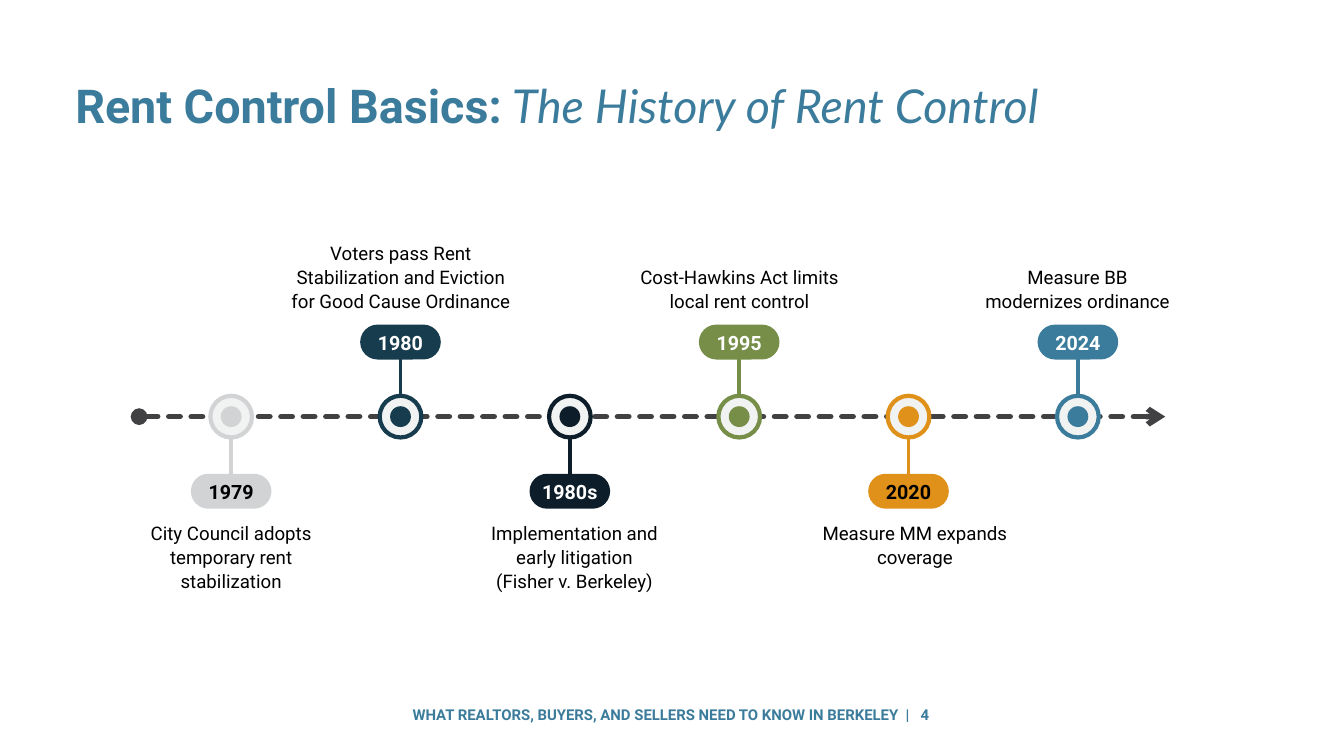
from pptx import Presentation
from pptx.dml.color import RGBColor
from pptx.enum.dml import MSO_LINE
from pptx.enum.shapes import MSO_CONNECTOR, MSO_SHAPE
from pptx.enum.text import MSO_ANCHOR, PP_ALIGN
from pptx.oxml.ns import qn
from pptx.util import Inches, Pt
from lxml import etree

STRAIGHT = MSO_CONNECTOR.STRAIGHT
OVAL, PILL = MSO_SHAPE.OVAL, MSO_SHAPE.ROUNDED_RECTANGLE
LEFT, CENTER = PP_ALIGN.LEFT, PP_ALIGN.CENTER
TOP, MIDDLE = MSO_ANCHOR.TOP, MSO_ANCHOR.MIDDLE
SHORT_DASH = MSO_LINE.SQUARE_DOT

BLACK = RGBColor(0x00, 0x00, 0x00)
WHITE = RGBColor(0xFF, 0xFF, 0xFF)
CHARCOAL = RGBColor(0x41, 0x40, 0x42)
PALE = RGBColor(0xF1, 0xF2, 0xF2)
SILVER = RGBColor(0xD1, 0xD3, 0xD4)
TEAL = RGBColor(0x17, 0x3C, 0x4E)
NAVY = RGBColor(0x0D, 0x1D, 0x29)
GREEN = RGBColor(0x76, 0x8E, 0x47)
AMBER = RGBColor(0xE0, 0x91, 0x1A)
BLUE = RGBColor(0x3B, 0x7B, 0x9B)

MILESTONES = [
    ("1979", "City Council adopts temporary rent stabilization",
     SILVER, BLACK, (2.19, 2.5, 1.07)),
    ("1980", "Voters pass Rent Stabilization and Eviction for Good Cause Ordinance",
     TEAL, WHITE, (4.27, 3.39, 1.07)),
    ("1980s", "Implementation and early litigation (Fisher v. Berkeley)",
     NAVY, WHITE, (7.23, 2.64, 1.07)),
    ("1995", "Cost-Hawkins Act limits local rent control",
     GREEN, WHITE, (9.51, 2.99, 0.72)),
    ("2020", "Measure MM expands coverage",
     AMBER, BLACK, (12.12, 2.99, 0.72)),
    ("2024", "Measure BB modernizes ordinance",
     BLUE, WHITE, (14.54, 2.99, 0.72)),
]


def write_text(shape, spans, size, color, spacing, align=CENTER, anchor=TOP, wrap=True):
    """Fill a shape with one paragraph of (text, font, bold, italic) spans."""
    frame = shape.text_frame
    frame.word_wrap = wrap
    frame.vertical_anchor = anchor
    frame.margin_left = frame.margin_right = frame.margin_top = frame.margin_bottom = 0
    para = frame.paragraphs[0]
    para.alignment = align
    para.line_spacing = Pt(spacing)
    for text, font, bold, italic in spans:
        span = para.add_run()
        span.text = text
        span.font.name = font
        span.font.size = Pt(size)
        span.font.bold = bold
        span.font.italic = italic
        span.font.color.rgb = color


def add_text(page, box, spans, **style):
    """Add a text box at a left, top, width, height box in inches."""
    shape = page.shapes.add_textbox(*map(Inches, box))
    write_text(shape, spans, **style)


def add_block(page, kind, box, fill, outline=None):
    """Add a flat preset shape with an optional outline."""
    shape = page.shapes.add_shape(kind, *map(Inches, box))
    shape.shadow.inherit = False
    shape.fill.solid()
    shape.fill.fore_color.rgb = fill
    if outline is None:
        shape.line.fill.background()
    else:
        shape.line.color.rgb = outline
        shape.line.width = Pt(4.5)
    return shape


def add_line(page, start, end, color, width, tail, head=None, dash=None):
    """Draw a straight line with decorated ends."""
    line = page.shapes.add_connector(STRAIGHT, *map(Inches, start + end))
    line.line.color.rgb = color
    line.line.width = Pt(width)
    if dash is not None:
        line.line.dash_style = dash
    outline = line.line._get_or_add_ln()
    outline.set("cap", "rnd")
    for tag, kind in (("a:headEnd", head), ("a:tailEnd", tail)):
        if kind:
            etree.SubElement(outline, qn(tag), type=kind)
    etree.SubElement(line._element.spPr, qn("a:effectLst"))


def add_disc(page, center, diameter, fill, outline=None):
    """Add a circle around a center point."""
    x, y = center
    radius = diameter / 2
    add_block(page, OVAL, (x - radius, y - radius, diameter, diameter), fill, outline)


def add_milestone(page, center, above, milestone):
    """Place one marker with its stem, year pill and description."""
    year, caption, color, year_color, (left, width, height) = milestone
    x, y = center
    side = -1 if above else 1
    add_disc(page, center, 0.62, PALE, color)
    add_disc(page, center, 0.31, color)
    add_line(page, (x, y + side * 0.31), (x, y + side * 0.94), color, 4, "diamond")
    pill_middle = y + side * 1.11
    pill = add_block(page, PILL, (x - 0.6, pill_middle - 0.26, 1.2, 0.52), color)
    pill.adjustments[0] = 0.5
    write_text(pill, [(year, "Roboto", True, False)], size=21.1, color=year_color,
               spacing=27, anchor=MIDDLE)
    top = y - 1.55 - height if above else y + 1.55
    add_text(page, (left, top, width, height), [(caption, "Roboto", False, False)],
             size=20, color=BLACK, spacing=25.6)


def add_timeline(page, box):
    """Draw the dashed axis and alternate the milestones below and above it."""
    left, axis, width, step = box
    add_line(page, (left, axis), (left + width, axis), CHARCOAL, 6, "arrow", "oval", SHORT_DASH)
    for index, milestone in enumerate(MILESTONES):
        center = (left + 1.37 + index * step, axis)
        add_milestone(page, center, index % 2 == 1, milestone)


def add_title(page, box):
    """Write the two-font headline."""
    add_text(page, box, [("Rent Control Basics:", "Roboto", True, False),
                         (" The History of Rent Control", "Lato", False, True)],
             size=50, color=BLUE, spacing=70, align=LEFT)


def add_footer(page, box):
    """Write the running footer and the page number to its right."""
    left, top, width, height = box
    style = {"size": 16, "color": BLUE, "spacing": 22.4, "wrap": False}
    footer = "WHAT REALTORS, BUYERS, AND SELLERS NEED TO KNOW IN BERKELEY  |"
    add_text(page, box, [(footer, "Roboto", True, False)], align=LEFT, **style)
    add_text(page, (left + width, top, 0.17, height), [("4", "Roboto", True, False)], **style)


def main():
    """Build the deck and save it."""
    deck = Presentation()
    deck.slide_width = Inches(20)
    deck.slide_height = Inches(11.25)
    page = deck.slides.add_slide(deck.slide_layouts[6])
    add_timeline(page, (2.07, 6.2, 15.27, 2.52))
    add_footer(page, (6.14, 10.46, 7.54, 0.31))
    add_title(page, (1.12, 1.01, 16.78, 0.94))
    deck.save("out.pptx")


if __name__ == "__main__":
    main()
